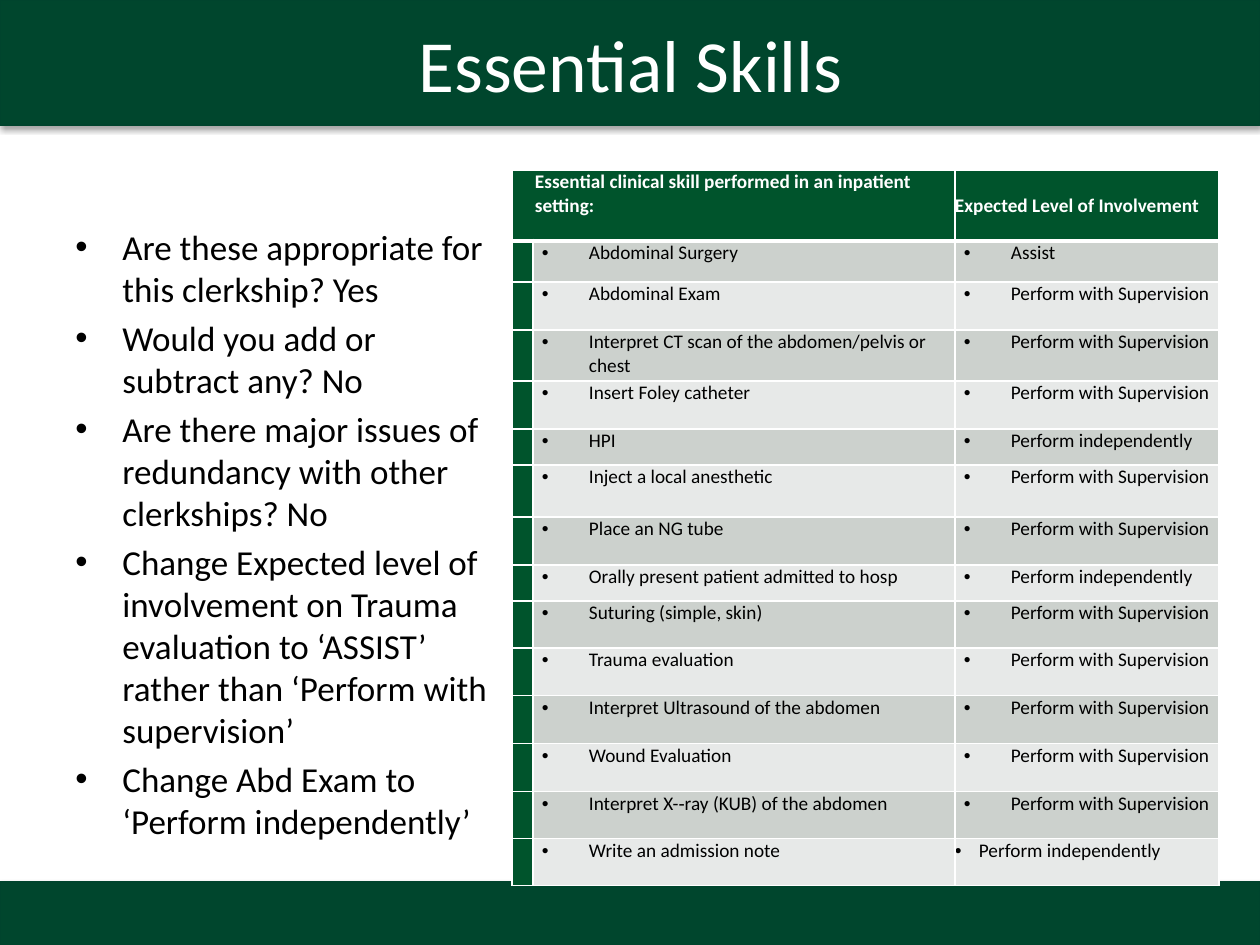
"""Build the Essential Skills slide: review answers beside a table of clinical skills."""
from lxml.etree import SubElement
from pptx import Presentation
from pptx.dml.color import RGBColor
from pptx.enum.shapes import MSO_SHAPE
from pptx.enum.text import MSO_ANCHOR, PP_ALIGN
from pptx.oxml import parse_xml
from pptx.oxml.ns import nsdecls, qn
from pptx.util import Pt

SCALE = 914400 / 126
FONT = "Calibri"
WHITE, BLACK = "FFFFFF", "000000"
BAR_GREEN, BAR_LINE, TABLE_GREEN = "00462D", "00442D", "00542C"
BANDS = ("CCD1CD", "E7E9E8")

TITLE = "Essential Skills"
ANSWERS = [
    "Are these appropriate for this clerkship? Yes",
    "Would you add or subtract any? No",
    "Are there major issues of redundancy with other clerkships? No",
    "Change Expected level of involvement on Trauma evaluation to ‘ASSIST’ rather than ‘Perform with supervision’",
    "Change Abd Exam to ‘Perform independently’",
]
HEADERS = ("Essential clinical skill performed in an inpatient setting:", "Expected Level of Involvement")
ASSIST, SUPERVISED, ALONE = "Assist", "Perform with Supervision", "Perform independently"
SKILLS = [
    ("Abdominal Surgery", ASSIST, 41),
    ("Abdominal Exam", SUPERVISED, 48),
    ("Interpret CT scan of the abdomen/pelvis or chest", SUPERVISED, 51),
    ("Insert Foley catheter", SUPERVISED, 48),
    ("HPI", ALONE, 36),
    ("Inject a local anesthetic", SUPERVISED, 52),
    ("Place an NG tube", SUPERVISED, 48),
    ("Orally present patient admitted to hosp", ALONE, 36),
    ("Suturing (simple, skin)", SUPERVISED, 47),
    ("Trauma evaluation", SUPERVISED, 48),
    ("Interpret Ultrasound of the abdomen", SUPERVISED, 48),
    ("Wound Evaluation", SUPERVISED, 48),
    ("Interpret X-‐ray (KUB) of the abdomen", SUPERVISED, 47),
    ("Write an admission note", ALONE, 47),
]
HEADER_HEIGHT = 71
COLUMN_WIDTHS = (21, 422, 264)
BARS = [(0, 0, 1260, 125), (0, 882, 1260, 63)]


def px(length):
    return round(length * SCALE)


def color(value):
    return RGBColor.from_string(value)


def write(paragraph, text, size, text_color, bold=False):
    paragraph.text = text
    font = paragraph.runs[0].font
    font.name, font.size, font.bold = FONT, Pt(size), bold
    font.color.rgb = color(text_color)


def indent(paragraph, left, bullet=True):
    properties = paragraph._p.get_or_add_pPr()
    properties.set("marL", str(px(left)))
    properties.set("indent", str(-px(left) if bullet else 0))
    if bullet:
        SubElement(properties, qn("a:buFont"), typeface="Arial")
        SubElement(properties, qn("a:buChar"), char="•")


def add_bar(slide, position, box):
    bar = slide.shapes.add_shape(MSO_SHAPE.RECTANGLE, *map(px, box))
    bar.fill.solid()
    bar.fill.fore_color.rgb = color(BAR_GREEN)
    bar.line.color.rgb = color(BAR_LINE)
    bar.line.width = Pt(0.75)
    bar._element.spPr.append(parse_xml(
        f'<a:effectLst {nsdecls("a")}><a:outerShdw blurRad="40000" dist="23000" dir="5400000" rotWithShape="0">'
        f'<a:srgbClr val="{BLACK}"><a:alpha val="35000"/></a:srgbClr></a:outerShdw></a:effectLst>'))
    slide.shapes._spTree.insert(2 + position, bar._element)


def add_title(slide):
    title = slide.shapes.title
    title.left, title.top, title.width, title.height = map(px, (24, 1, 1213, 125))
    title.text_frame.vertical_anchor = MSO_ANCHOR.MIDDLE
    write(title.text_frame.paragraphs[0], TITLE, 42, WHITE)
    title.text_frame.paragraphs[0].alignment = PP_ALIGN.CENTER


def add_answers(slide):
    frame = slide.shapes.add_textbox(*map(px, (63, 219, 449, 636))).text_frame
    frame.word_wrap = True
    for index, answer in enumerate(ANSWERS):
        paragraph = frame.add_paragraph() if index else frame.paragraphs[0]
        indent(paragraph, 47)
        if index:
            paragraph.space_before = Pt(4)
        write(paragraph, answer, 20, BLACK)


def style_cell(cell, fill, side_margin=9, bottom_width=1):
    cell.margin_left = cell.margin_right = px(side_margin)
    cell.margin_top = cell.margin_bottom = 0
    properties = cell._tc.get_or_add_tcPr()
    for side in "LRTB":
        width = bottom_width if side == "B" else 1
        properties.append(parse_xml(
            f'<a:ln{side} {nsdecls("a")} w="{Pt(width)}"><a:solidFill>'
            f'<a:srgbClr val="{WHITE}"/></a:solidFill></a:ln{side}>'))
    cell.fill.solid()
    cell.fill.fore_color.rgb = color(fill)


def add_table(slide):
    heights = [HEADER_HEIGHT] + [height for _, _, height in SKILLS]
    box = (512, 170, sum(COLUMN_WIDTHS), sum(heights))
    table = slide.shapes.add_table(len(heights), len(COLUMN_WIDTHS), *map(px, box)).table
    for column, width in zip(table.columns, COLUMN_WIDTHS):
        column.width = px(width)
    for row, height in zip(table.rows, heights):
        row.height = px(height)

    for column in range(3):
        style_cell(table.cell(0, column), TABLE_GREEN, 0 if column == 2 else 9, 3)
    table.cell(0, 0).merge(table.cell(0, 1))
    table.cell(0, 2).vertical_anchor = MSO_ANCHOR.MIDDLE
    for column, header in zip((0, 2), HEADERS):
        write(table.cell(0, column).text_frame.paragraphs[0], header, 11, WHITE, True)
    indent(table.cell(0, 0).text_frame.paragraphs[0], 14, bullet=False)

    for row, (skill, level, _) in enumerate(SKILLS, 1):
        marker = table.cell(row, 0)
        style_cell(marker, TABLE_GREEN, 0)
        SubElement(marker.text_frame.paragraphs[0]._p, qn("a:endParaRPr"), sz="1100")
        for column, text in enumerate((skill, level), 1):
            cell = table.cell(row, column)
            tight = row == len(SKILLS) and column == 2
            style_cell(cell, BANDS[(row - 1) % 2], 0 if tight else 9)
            indent(cell.text_frame.paragraphs[0], 24 if tight else 47)
            write(cell.text_frame.paragraphs[0], text, 11, BLACK)


def main():
    presentation = Presentation()
    presentation.slide_width, presentation.slide_height = px(1260), px(945)
    slide = presentation.slides.add_slide(presentation.slide_layouts[5])
    for position, box in enumerate(BARS):
        add_bar(slide, position, box)
    add_title(slide)
    add_answers(slide)
    add_table(slide)
    presentation.save("out.pptx")


if __name__ == "__main__":
    main()
